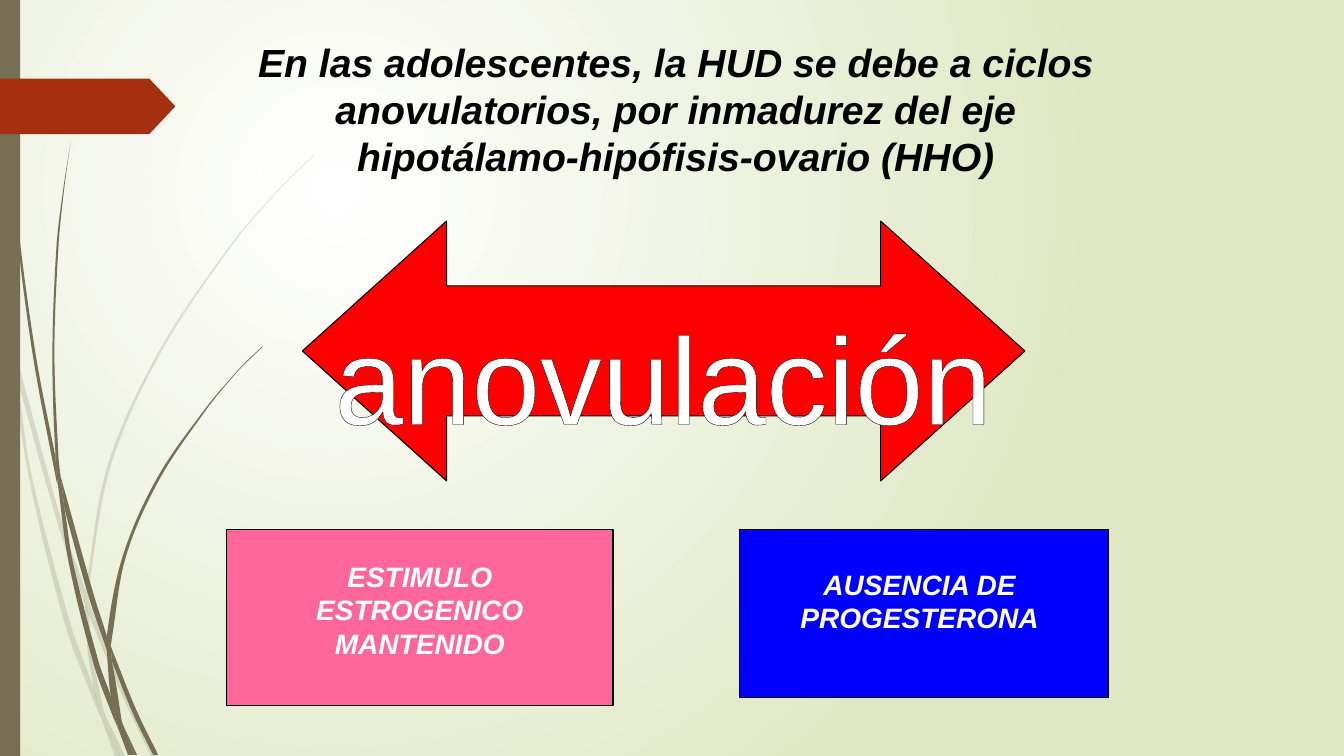
"""Build a slide on anovulation as the cause of HUD in adolescents."""
from lxml import etree
from pptx import Presentation
from pptx.dml.color import RGBColor
from pptx.enum.shapes import MSO_SHAPE
from pptx.enum.text import MSO_ANCHOR, MSO_AUTO_SIZE, PP_ALIGN
from pptx.oxml.ns import qn
from pptx.util import Cm, Pt

RECTANGLE = MSO_SHAPE.RECTANGLE
PENTAGON = MSO_SHAPE.PENTAGON
DOUBLE_ARROW = MSO_SHAPE.LEFT_RIGHT_ARROW
TOP = MSO_ANCHOR.TOP
NO_AUTOFIT = MSO_AUTO_SIZE.NONE
CENTER = PP_ALIGN.CENTER

COLOURS = {
    "white": "FFFFFF", "black": "000000", "pale green": "DFE8C4",
    "olive": "766F54", "rust": "A53010", "red": "FF0000",
    "pink": "FF6699", "blue": "0000FF",
}

TITLE = ("En las adolescentes, la HUD se debe a ciclos anovulatorios, "
         "por inmadurez del eje hipotálamo-hipófisis-ovario (HHO)")
TITLE_AREA = (5.28, 0.84, 23.5, 10.77)
ARROW_AREA = (7.62, 5.57, 18.21, 6.55)
ARROW_WORD = "anovulación"
WORD_AREA = (8.08, 7.47, 17.27, 3.73)
CARDS = [
    ("ESTIMULO ESTROGENICO MANTENIDO", "pink",
     (5.72, 13.34, 9.73, 4.45), (6.35, 13.97, 8.46, 2.79)),
    ("AUSENCIA DE PROGESTERONA", "blue",
     (18.63, 13.34, 9.31, 4.24), (19.26, 14.17, 7.83, 1.96)),
]
TITLE_FORMAT = {"name": "Arial", "size": Pt(28), "bold": True, "italic": True}
CARD_FORMAT = {**TITLE_FORMAT, "size": Pt(20)}
WORD_FORMAT = {"name": "Arial", "size": Pt(88), "bold": False}

RAIL_AREA = (0, 0, 0.51, 19.05)
TAB_AREA = (0, 1.98, 4.42, 1.4)

# Knots in inches along the two edges of each piece of grass.
FAINT_GRASS = [
    ([(0.11, 3.5), (0.09, 3.22), (0, 2.82)], [(0, 2.99), (0.1, 3.44), (0.11, 3.5)]),
    ([(0.17, 3.76), (0.58, 5.22), (0.84, 5.99)], [(0.85, 5.86), (0.62, 5.2), (0.14, 3.45)]),
    ([(0.88, 6.1), (1.23, 6.94), (1.5, 7.5)],
     [(1.55, 7.5), (1.27, 6.92), (0.92, 6.07), (0.88, 5.96)]),
    ([(1.05, 7.11), (1.19, 7.5)], [(1.24, 7.5), (1.05, 7.11)]),
    ([(0.11, 3.5), (0.28, 4.7), (0.65, 6.21), (0.92, 6.93), (1.01, 7.14)],
     [(0.99, 7.07), (0.93, 6.83), (0.7, 6.19), (0.31, 4.69), (0.17, 3.76), (0.11, 3.5)]),
    ([(0.84, 5.99), (0.87, 6.46), (0.93, 6.83), (0.96, 6.92), (1.05, 7.11)],
     [(1.03, 7.06), (0.91, 6.46), (0.88, 6.1), (0.84, 5.99)]),
    ([(0.88, 5.96), (0.88, 5.84), (1.1, 4.62), (1.6, 3.49), (2.29, 2.45), (2.68, 1.98),
      (2.9, 1.75), (3.12, 1.54)],
     [(3.12, 1.53), (2.89, 1.75), (2.68, 1.97), (2.28, 2.44), (1.58, 3.48), (1.07, 4.61),
      (0.85, 5.84), (0.85, 5.86)]),
    ([(1.01, 7.14), (1.14, 7.5)], [(1.19, 7.5), (1.01, 7.14)]),
    ([(0.85, 5.86), (0.84, 5.99), (0.88, 6.1)], [(0.88, 5.96), (0.85, 5.86)]),
    ([(0.93, 6.83), (0.99, 7.07), (1.01, 7.14), (1.19, 7.5)],
     [(1.05, 7.11), (0.96, 6.92), (0.93, 6.83)]),
]
DARK_GRASS = [
    ([(0.03, 0), (0.04, 0.48), (0.07, 1.1), (0.17, 2.33), (0.33, 3.55), (0.56, 4.77), (0.57, 4.81)],
     [(0.55, 4.53), (0.36, 3.55), (0.19, 2.32), (0.08, 1.09), (0.05, 0.48), (0.04, 0)]),
    ([(0.64, 5.05), (0.88, 5.92), (1.06, 6.45)],
     [(1.06, 6.33), (1.06, 6.31), (0.93, 5.9), (0.6, 4.72)]),
    ([(1.11, 6.56), (1.32, 7.08), (1.52, 7.49)],
     [(1.57, 7.49), (1.36, 7.06), (1.13, 6.49), (1.1, 6.41)]),
    ([(0.57, 4.77), (0.68, 5.57), (0.93, 6.59), (1.11, 7.08), (1.17, 7.22)],
     [(1.16, 7.17), (1.1, 6.91), (0.98, 6.57), (0.72, 5.56), (0.64, 5.05), (0.57, 4.77)]),
    ([(0.6, 4.72), (0.58, 4.53), (0.54, 3.49), (0.58, 2.45), (0.63, 1.93), (0.7, 1.41)],
     [(0.7, 1.41), (0.62, 1.93), (0.56, 2.45), (0.52, 3.49), (0.55, 4.49), (0.6, 4.72)]),
    ([(1.22, 7.19), (1.33, 7.49)], [(1.36, 7.49), (1.22, 7.19)]),
    ([(0.55, 4.49), (0.55, 4.53), (0.57, 4.77), (0.64, 5.05)], [(0.6, 4.72), (0.55, 4.49)]),
    ([(1.11, 6.33), (1.25, 5.52), (1.58, 4.76), (2.05, 4.06), (2.31, 3.74), (2.45, 3.59),
      (2.61, 3.44)],
     [(2.6, 3.44), (2.45, 3.58), (2.31, 3.73), (2.04, 4.05), (1.56, 4.74), (1.22, 5.51),
      (1.06, 6.31), (1.1, 6.41)]),
    ([(1.17, 7.22), (1.27, 7.49)], [(1.31, 7.49), (1.17, 7.22)]),
    ([(1.06, 6.45), (1.1, 6.91), (1.16, 7.06), (1.22, 7.19)],
     [(1.21, 7.16), (1.11, 6.56), (1.06, 6.45)]),
    ([(1.06, 6.31), (1.06, 6.45), (1.11, 6.56)], [(1.1, 6.41), (1.06, 6.31)]),
    ([(1.1, 6.91), (1.16, 7.17), (1.17, 7.22), (1.3, 7.49)],
     [(1.33, 7.49), (1.22, 7.19), (1.16, 7.06), (1.1, 6.91)]),
]
CM_PER_INCH = 2.54


def rgb(colour):
    return RGBColor.from_string(COLOURS[colour])


def lengths(area):
    return [Cm(value) for value in area]


def paint(shape, fill, line=None):
    shape.shadow.inherit = False
    shape.fill.solid()
    shape.fill.fore_color.rgb = rgb(fill)
    if line:
        shape.line.color.rgb = rgb(line)
        shape.line.width = Pt(0.75)
    else:
        shape.line.fill.background()


def add_block(page, kind, area, fill, line=None):
    block = page.shapes.add_shape(kind, *lengths(area))
    paint(block, fill, line)
    return block


def write(box, text, colour, formats, wrap=True):
    frame = box.text_frame
    frame.word_wrap = wrap
    frame.auto_size = NO_AUTOFIT
    frame.vertical_anchor = TOP
    para = frame.paragraphs[0]
    para.alignment = CENTER
    para.line_spacing = 1.0
    para.space_before = Pt(0)
    span = para.add_run()
    span.text = text
    for name, value in formats.items():
        setattr(span.font, name, value)
    span.font.color.rgb = rgb(colour)
    return span


def outline_text(span, colour):
    line = etree.Element(qn("a:ln"), w=str(Pt(0.75)))
    solid = etree.SubElement(line, qn("a:solidFill"))
    etree.SubElement(solid, qn("a:srgbClr"), val=COLOURS[colour])
    span.font._element.insert(0, line)


def curve_points(edge):
    """Return two control points and an end point for each step of an edge."""
    knots = [complex(*knot) for knot in edge]
    padded = [knots[0], *knots, knots[-1]]
    points = []
    for before, start, end, after in zip(padded, padded[1:], padded[2:], padded[3:]):
        reach = abs(end - start) / 3
        leave, arrive = end - before, after - start
        points += [start + reach * leave / (abs(leave) or 1),
                   end - reach * arrive / (abs(arrive) or 1), end]
    return [(point.real, point.imag) for point in points]


def add_grass(page, edge, return_edge, opacity):
    outline = [edge[0]]
    for run in (edge, (edge[-1], return_edge[0]), return_edge):
        outline += curve_points(run)
    points = [lengths(value * CM_PER_INCH for value in point) for point in outline]
    builder = page.shapes.build_freeform(*points[0])
    builder.add_line_segments(points[1:], close=True)
    grass = builder.convert_to_shape()
    paint(grass, "olive")
    properties = grass._element.spPr
    lines = list(properties.iter(qn("a:lnTo")))[:len(points) - 1]
    for first in range(0, len(lines), 3):
        curve = etree.Element(qn("a:cubicBezTo"))
        lines[first].addprevious(curve)
        for line in lines[first:first + 3]:
            curve.append(line[0])
            line.getparent().remove(line)
    if opacity < 100:
        colour = properties.find(qn("a:solidFill"))[0]
        etree.SubElement(colour, qn("a:alpha"), val=str(opacity * 1000))


def paint_background(page):
    fill = page.background.fill
    fill.gradient()
    for stop, colour, position in zip(fill.gradient_stops, ("white", "pale green"), (0, 1)):
        stop.color.rgb = rgb(colour)
        stop.position = position
    gradient = page.background._cSld.find(".//" + qn("a:gradFill"))
    gradient.remove(gradient.find(qn("a:lin")))
    radial = etree.SubElement(gradient, qn("a:path"), path="circle")
    etree.SubElement(radial, qn("a:fillToRect"), l="50000", t="50000", r="100000", b="100000")


def main():
    deck = Presentation()
    deck.slide_width, deck.slide_height = Cm(33.87), Cm(19.05)
    page = deck.slides.add_slide(deck.slide_layouts[5])
    paint_background(page)
    for pieces, opacity in ((FAINT_GRASS, 20), (DARK_GRASS, 100)):
        for edge, return_edge in pieces:
            add_grass(page, edge, return_edge, opacity)
    add_block(page, RECTANGLE, RAIL_AREA, "olive")
    add_block(page, PENTAGON, TAB_AREA, "rust").adjustments[0] = 0.47
    title = page.shapes.title
    title.left, title.top, title.width, title.height = lengths(TITLE_AREA)
    write(title, TITLE, "black", TITLE_FORMAT)
    arrow = add_block(page, DOUBLE_ARROW, ARROW_AREA, "red", "black")
    arrow.adjustments[0], arrow.adjustments[1] = 0.5, 0.555
    word = page.shapes.add_textbox(*lengths(WORD_AREA))
    outline_text(write(word, ARROW_WORD, "white", WORD_FORMAT, False), "black")
    for text, fill, card_area, text_area in CARDS:
        add_block(page, RECTANGLE, card_area, fill, "black")
        write(page.shapes.add_textbox(*lengths(text_area)), text, "white", CARD_FORMAT)
    deck.save("out.pptx")


if __name__ == "__main__":
    main()
